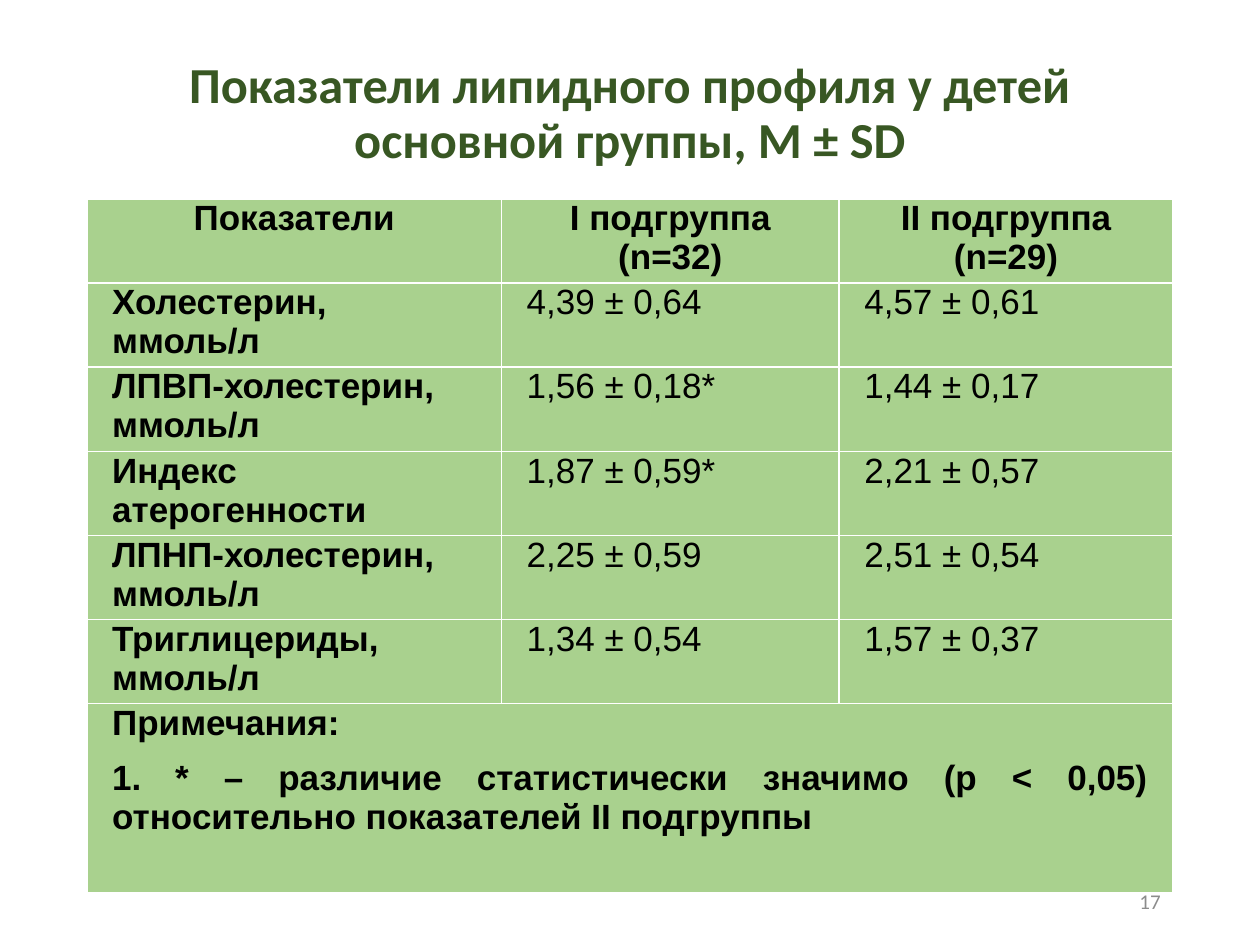
"""Build the slide with the table of lipid profile values in two subgroups."""
from typing import NamedTuple

from pptx import Presentation
from pptx.dml.color import RGBColor
from pptx.enum.text import MSO_ANCHOR, MSO_AUTO_SIZE, PP_ALIGN
from pptx.util import Inches, Pt

LEFT, CENTER, RIGHT, JUSTIFY = PP_ALIGN.LEFT, PP_ALIGN.CENTER, PP_ALIGN.RIGHT, PP_ALIGN.JUSTIFY
MIDDLE = MSO_ANCHOR.MIDDLE
NO_AUTOFIT = MSO_AUTO_SIZE.NONE
COLORS = {"title": "385723", "cell": "A9D18E", "text": "000000", "number": "8C8C8C"}
CONTENT_LEFT, CONTENT_WIDTH = 0.69, 8.62
COLUMN_WIDTHS = (3.29, 2.68, 2.65)
ROW_HEIGHT, NOTES_HEIGHT = 3.87 / 6, 1.5


class TextStyle(NamedTuple):
    font: str
    size: float
    color: str
    bold: bool
    alignment: PP_ALIGN


class Indicator(NamedTuple):
    name: str
    first: str
    second: str


TITLE = TextStyle("Calibri", 28.8, "title", True, CENTER)
NUMBER = TextStyle("Calibri", 12, "number", False, RIGHT)
HEADER = TextStyle("Arial", 20, "text", True, CENTER)
NAME = HEADER._replace(alignment=LEFT)
VALUE = HEADER._replace(bold=False, alignment=JUSTIFY)
NOTES = HEADER._replace(alignment=JUSTIFY)

HEADINGS = Indicator("Показатели", "I подгруппа (n=32)", "II подгруппа (n=29)")
INDICATORS = (
    Indicator("Холестерин, ммоль/л", "4,39 ± 0,64", "4,57 ± 0,61"),
    Indicator("ЛПВП-холестерин, ммоль/л", "1,56 ± 0,18*", "1,44 ± 0,17"),
    Indicator("Индекс атерогенности", "1,87 ± 0,59*", "2,21 ± 0,57"),
    Indicator("ЛПНП-холестерин, ммоль/л", "2,25 ± 0,59", "2,51 ± 0,54"),
    Indicator("Триглицериды, ммоль/л", "1,34 ± 0,54", "1,57 ± 0,37"),
)
NOTE_LINES = (
    "Примечания:\n"
    "1.\t* – различие статистически значимо (р < 0,05) относительно показателей II подгруппы"
)


def write_text(text_frame, text: str, style: TextStyle) -> None:
    """Write the text in one style, one paragraph a line."""
    text_frame.text = text
    for paragraph in text_frame.paragraphs:
        paragraph.alignment = style.alignment
        font = paragraph.font
        font.name, font.size, font.bold = style.font, Pt(style.size), style.bold
        font.color.rgb = RGBColor.from_string(COLORS[style.color])


def fill_cell(cell, text: str, style: TextStyle) -> None:
    """Colour a table cell and write its text."""
    cell.fill.solid()
    cell.fill.fore_color.rgb = RGBColor.from_string(COLORS["cell"])
    cell.margin_left = cell.margin_right = Inches(0.2)
    cell.margin_top = cell.margin_bottom = 0
    write_text(cell.text_frame, text, style)


def add_title(slide) -> None:
    """Place and format the slide title."""
    title = slide.shapes.title
    title.left, title.top = Inches(CONTENT_LEFT), Inches(0.4)
    title.width, title.height = Inches(CONTENT_WIDTH), Inches(1.02)
    text_frame = title.text_frame
    text_frame.auto_size = NO_AUTOFIT
    text_frame.vertical_anchor = MIDDLE
    write_text(text_frame, "Показатели липидного профиля у детей основной группы, M ± SD", TITLE)
    text_frame.paragraphs[0].line_spacing = 0.9


def add_lipid_table(slide) -> None:
    """Add the table with its heading, indicator and notes rows."""
    row_count = len(INDICATORS) + 2
    height = ROW_HEIGHT * (row_count - 1) + NOTES_HEIGHT
    table = slide.shapes.add_table(
        row_count, len(COLUMN_WIDTHS),
        Inches(CONTENT_LEFT), Inches(1.58), Inches(CONTENT_WIDTH), Inches(height),
    ).table
    table.horz_banding = False
    for column, width in zip(table.columns, COLUMN_WIDTHS):
        column.width = Inches(width)
    for row in table.rows:
        row.height = Inches(ROW_HEIGHT)
    table.rows[row_count - 1].height = Inches(NOTES_HEIGHT)

    for row_index, texts in enumerate((HEADINGS, *INDICATORS)):
        styles = (NAME, VALUE, VALUE) if row_index else (HEADER,) * 3
        for column_index, (text, style) in enumerate(zip(texts, styles)):
            fill_cell(table.cell(row_index, column_index), text, style)

    notes = table.cell(row_count - 1, 0)
    notes.merge(table.cell(row_count - 1, len(COLUMN_WIDTHS) - 1))
    fill_cell(notes, NOTE_LINES, NOTES)
    notes.text_frame.paragraphs[1].space_before = Pt(9.2)


def add_slide_number(slide) -> None:
    """Add the slide number at the lower right."""
    box = slide.shapes.add_textbox(Inches(7.06), Inches(6.95), Inches(2.25), Inches(0.4))
    box.text_frame.word_wrap = True
    box.text_frame.vertical_anchor = MIDDLE
    write_text(box.text_frame, "17", NUMBER)


def main() -> None:
    """Build and save the presentation."""
    presentation = Presentation()
    presentation.slide_width, presentation.slide_height = Inches(10), Inches(7.5)
    slide = presentation.slides.add_slide(presentation.slide_layouts[5])
    add_title(slide)
    add_slide_number(slide)
    add_lipid_table(slide)
    presentation.save("out.pptx")


if __name__ == "__main__":
    main()
